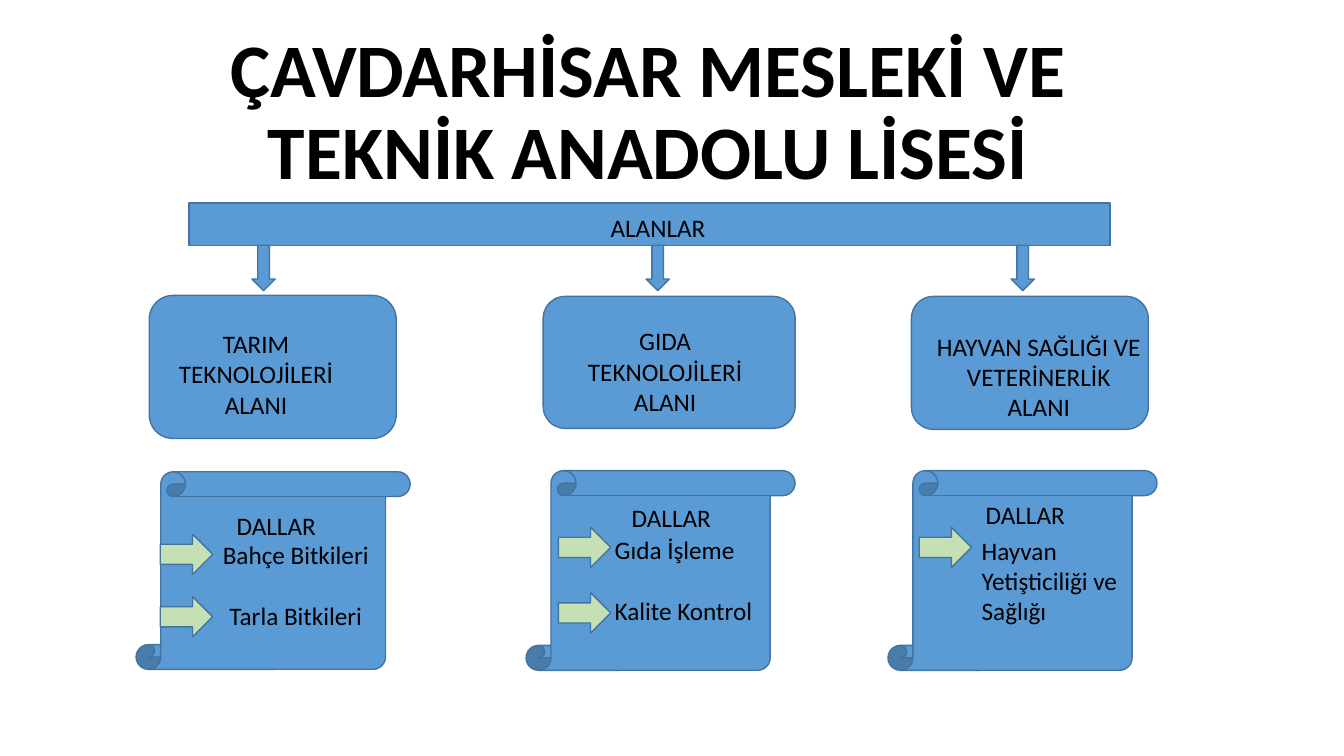
from pptx import Presentation
from pptx.dml.color import RGBColor
from pptx.enum.shapes import MSO_SHAPE
from pptx.enum.text import MSO_ANCHOR, PP_ALIGN
from pptx.util import Pt

RECT = MSO_SHAPE.RECTANGLE
ROUND = MSO_SHAPE.FLOWCHART_ALTERNATE_PROCESS
SCROLL = MSO_SHAPE.VERTICAL_SCROLL
RIGHT = MSO_SHAPE.RIGHT_ARROW
DOWN = MSO_SHAPE.DOWN_ARROW
LEFT, CENTER = PP_ALIGN.LEFT, PP_ALIGN.CENTER
TOP, BOTTOM = MSO_ANCHOR.TOP, MSO_ANCHOR.BOTTOM

BLUE, EDGE, GREEN, BLACK = "5B9BD5", "43739E", "C5E0B4", "000000"
FONT = "Calibri"
BLANK_LINE = 22

FIELDS = [
    dict(box=(106.6, 211, 176.4, 102.2), arrow=180,
         label=(7.9, 20, 136.8), lines=["TARIM TEKNOLOJİLERİ ALANI"]),
    dict(box=(388, 211.7, 180, 94.3), arrow=461.5,
         label=(0, 17.3, 174.2), lines=["GIDA", "TEKNOLOJİLERİ", "ALANI"]),
    dict(box=(651, 211.7, 169.2, 95), arrow=722.2,
         label=(5.7, 21.2, 170.6),
         lines=["HAYVAN SAĞLIĞI VE VETERİNERLİK", "ALANI"]),
]
BRANCHES = [
    dict(box=(97.2, 337, 195.8, 141.1), head=(64.8, 23.7),
         arrow=(17.3, 44.6), step=44.6, text=(50.4, 44.6, 127.4),
         items=["Bahçe Bitkileri", "Tarla Bitkileri"], align=CENTER),
    dict(box=(375.8, 336.2, 192.2, 142.6), head=(68.4, 18.8),
         arrow=(23, 40.4), step=46.8, text=(56.2, 41.8, 124.6),
         items=["Gıda İşleme", "Kalite Kontrol"], align=LEFT),
    dict(box=(634.3, 336.2, 192.2, 142.6), head=(62.7, 16.6),
         arrow=(22.3, 40.4), step=0, text=(59.8, 42.5, 111.6),
         items=["Hayvan Yetişticiliği ve Sağlığı"], align=LEFT),
]


def color(code):
    return RGBColor.from_string(code)


def add_form(slide, kind, x, y, w, h, fill=BLUE):
    form = slide.shapes.add_shape(kind, Pt(x), Pt(y), Pt(w), Pt(h))
    form.shadow.inherit = False
    form.fill.solid()
    form.fill.fore_color.rgb = color(fill)
    form.line.color.rgb = color(EDGE)
    form.line.width = Pt(1)


def add_text(slide, x, y, w, h, lines, size=18, bold=False, align=CENTER,
             anchor=TOP, gap=0, spacing=1.0):
    frame = slide.shapes.add_textbox(Pt(x), Pt(y), Pt(w), Pt(h)).text_frame
    frame.word_wrap = True
    frame.vertical_anchor = anchor
    for i, line in enumerate(lines):
        para = frame.paragraphs[0] if i == 0 else frame.add_paragraph()
        para.alignment = align
        para.line_spacing = spacing
        para.space_before = Pt(gap if i else 0)
        run = para.add_run()
        run.text = line
        run.font.name = FONT
        run.font.size = Pt(size)
        run.font.bold = bold
        run.font.color.rgb = color(BLACK)


def add_title(slide, x, y, w, h):
    add_text(slide, x, y, w, h, ["ÇAVDARHİSAR MESLEKİ VE TEKNİK ANADOLU LİSESİ"],
             size=54, bold=True, anchor=BOTTOM, spacing=0.9)


def add_bar(slide, x, y, w, h):
    add_form(slide, RECT, x, y, w, h)
    add_text(slide, x + 146, y + 2.9, 378, 29, ["ALANLAR"])
    for field in FIELDS:
        add_form(slide, DOWN, field["arrow"], y + h, 16.6, 32.4)


def add_field(slide, field):
    x, y, w, h = field["box"]
    dx, dy, wide = field["label"]
    add_form(slide, ROUND, x, y, w, h)
    add_text(slide, x + dx, y + dy, wide, 72.7, field["lines"])


def add_branch(slide, branch):
    x, y, w, h = branch["box"]
    add_form(slide, SCROLL, x, y, w, h)
    dx, dy = branch["head"]
    add_text(slide, x + dx, y + dy, 89.3, 29, ["DALLAR"], align=LEFT)
    dx, dy = branch["arrow"]
    for i in range(len(branch["items"])):
        add_form(slide, RIGHT, x + dx, y + dy + i * branch["step"],
                 37.4, 28.8, GREEN)
    dx, dy, wide = branch["text"]
    add_text(slide, x + dx, y + dy, wide, 72.7, branch["items"],
             align=branch["align"], gap=BLANK_LINE)


def main():
    deck = Presentation()
    deck.slide_width, deck.slide_height = Pt(960), Pt(540)
    slide = deck.slides.add_slide(deck.slide_layouts[6])
    add_title(slide, 106.6, 22.3, 712.8, 121)
    add_bar(slide, 135, 145, 658, 30.2)
    for field, branch in zip(FIELDS, BRANCHES):
        add_field(slide, field)
        add_branch(slide, branch)
    deck.save("out.pptx")


if __name__ == "__main__":
    main()
